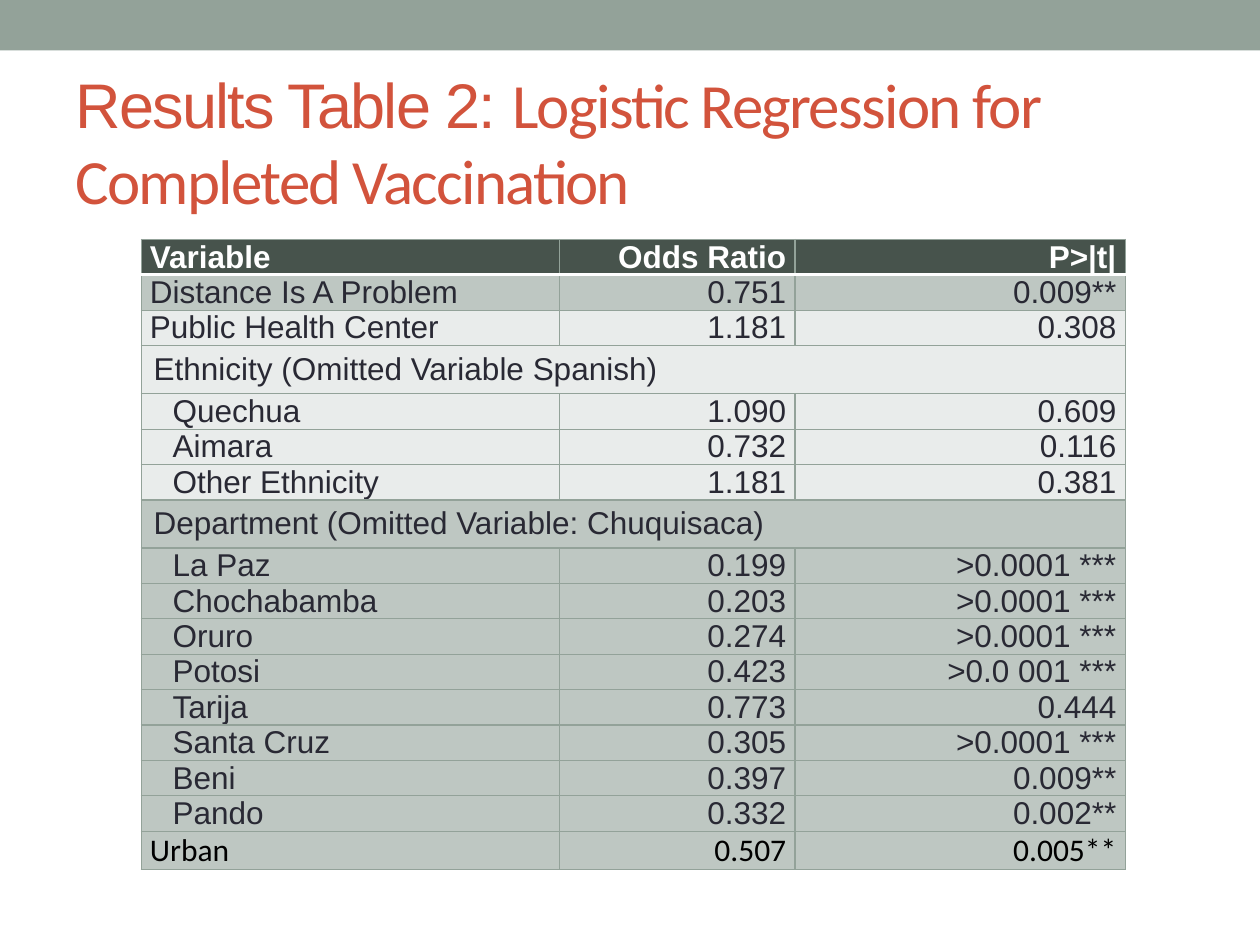
import dataclasses

import lxml.etree
import pptx
import pptx.dml.color
import pptx.enum.shapes
import pptx.enum.text
import pptx.oxml.ns
import pptx.util

Inches = pptx.util.Inches
Pt = pptx.util.Pt
Align = pptx.enum.text.PP_ALIGN
Anchor = pptx.enum.text.MSO_ANCHOR


@dataclasses.dataclass(frozen=True)
class Theme:
    sage: str = "93A299"
    header: str = "47534C"
    band: str = "BEC7C2"
    pale: str = "E9ECEB"
    title: str = "D2533C"
    ink: str = "292934"
    black: str = "000000"
    white: str = "FFFFFF"
    main_font: str = "Arial"
    alt_font: str = "Calibri"
    title_size: int = 36
    table_size: int = 18
    table_leading: float = 20.2
    rule: float = 0.75
    header_rule: float = 2.08


THEME = Theme()

COLUMN_WIDTHS = (3.32, 1.87, 2.62)
HEADINGS = ("Variable", "Odds Ratio", "P>|t|")
GENERAL = (
    ("Distance Is A Problem", "0.751", "0.009**"),
    ("Public Health Center", "1.181", "0.308"),
)
ETHNICITIES = (
    ("Quechua", "1.090", "0.609"),
    ("Aimara", "0.732", "0.116"),
    ("Other Ethnicity", "1.181", "0.381"),
)
DEPARTMENTS = (
    ("La Paz", "0.199", ">0.0001 ***"),
    ("Chochabamba", "0.203", ">0.0001 ***"),
    ("Oruro", "0.274", ">0.0001 ***"),
    ("Potosi", "0.423", ">0.0 001 ***"),
    ("Tarija", "0.773", "0.444"),
    ("Santa Cruz", "0.305", ">0.0001 ***"),
    ("Beni", "0.397", "0.009**"),
    ("Pando", "0.332", "0.002**"),
)
URBAN = ("Urban", "0.507", "0.005**")


@dataclasses.dataclass(frozen=True)
class RowStyle:
    fill: str
    color: str = THEME.ink
    font: str = THEME.main_font
    bold: bool = False
    height: float = 0.28
    indent: tuple = (0, 0)
    is_group: bool = False


def result_rows():
    member_indent = (0.12, 0.06)
    distance, health_center = GENERAL
    rows = [
        (HEADINGS, RowStyle(THEME.header, THEME.white, bold=True)),
        (distance, RowStyle(THEME.band)),
        (health_center, RowStyle(THEME.pale)),
    ]
    groups = (
        ("Ethnicity (Omitted Variable Spanish)", ETHNICITIES, THEME.pale),
        ("Department (Omitted Variable: Chuquisaca)", DEPARTMENTS, THEME.band),
    )
    for heading, members, fill in groups:
        rows.append(((heading, "", ""), RowStyle(fill, height=0.38, is_group=True)))
        rows += [(member, RowStyle(fill, indent=member_indent)) for member in members]
    rows.append((URBAN, RowStyle(THEME.band, THEME.black, THEME.alt_font,
                                 height=0.3, indent=(0.12, -0.12))))
    return rows


def rgb(color):
    return pptx.dml.color.RGBColor.from_string(color)


def add_run(paragraph, text, font, size, color, bold=False):
    run = paragraph.add_run()
    run.text = text
    run.font.name = font
    run.font.size = Pt(size)
    run.font.bold = bold
    run.font.color.rgb = rgb(color)
    return run


def add_top_band(slide):
    band = slide.shapes.add_shape(pptx.enum.shapes.MSO_SHAPE.RECTANGLE,
                                  0, 0, Inches(10), Inches(0.4))
    band.shadow.inherit = False
    band.fill.solid()
    band.fill.fore_color.rgb = rgb(THEME.sage)
    band.line.fill.background()


def add_title(slide):
    title = slide.shapes.add_textbox(Inches(0.5), Inches(0.58), Inches(9), Inches(1.08))
    frame = title.text_frame
    frame.word_wrap = True
    frame.vertical_anchor = Anchor.MIDDLE
    parts = (
        ("Results Table 2: ", THEME.main_font),
        ("Logistic Regression for Completed Vaccination", THEME.alt_font),
    )
    for text, font in parts:
        run = add_run(frame.paragraphs[0], text, font, THEME.title_size, THEME.title)
        run.font._element.set("spc", "-100")


def set_border(cell, side, color, width):
    qn = pptx.oxml.ns.qn
    line = lxml.etree.SubElement(cell._tc.get_or_add_tcPr(), qn(f"a:ln{side}"),
                                 w=str(int(Pt(width))))
    fill = lxml.etree.SubElement(line, qn("a:solidFill"))
    lxml.etree.SubElement(fill, qn("a:srgbClr"), val=color)


def style_cell(cell, style, row_index):
    for side in "LRTB":
        under_header = (row_index, side) in ((0, "B"), (1, "T"))
        if under_header:
            set_border(cell, side, THEME.white, THEME.header_rule)
        else:
            set_border(cell, side, THEME.sage, THEME.rule)
    cell.fill.solid()
    cell.fill.fore_color.rgb = rgb(style.fill)
    if style.font == THEME.main_font:
        cell.text_frame.paragraphs[0].line_spacing = Pt(THEME.table_leading)
    if not style.is_group:
        cell.vertical_anchor = Anchor.BOTTOM
        cell.margin_left = cell.margin_right = Inches(0.07)
        cell.margin_top = cell.margin_bottom = 0


def fill_cell(cell, text, style, column):
    paragraph = cell.text_frame.paragraphs[0]
    paragraph.alignment = Align.RIGHT if column else Align.LEFT
    if column == 0 and any(style.indent):
        margin, first_line = style.indent
        properties = paragraph._p.get_or_add_pPr()
        properties.set("marL", str(Inches(margin)))
        properties.set("indent", str(Inches(first_line)))
    add_run(paragraph, text, style.font, THEME.table_size, style.color, style.bold)


def add_results_table(slide):
    rows = result_rows()
    height = sum(style.height for _, style in rows)
    table = slide.shapes.add_table(len(rows), len(COLUMN_WIDTHS), Inches(1.12), Inches(1.9),
                                   Inches(sum(COLUMN_WIDTHS)), Inches(height)).table
    for column, width in zip(table.columns, COLUMN_WIDTHS):
        column.width = Inches(width)
    for row_index, (texts, style) in enumerate(rows):
        table.rows[row_index].height = Inches(style.height)
        for column, text in enumerate(texts):
            cell = table.cell(row_index, column)
            style_cell(cell, style, row_index)
            if text:
                fill_cell(cell, text, style, column)
        if style.is_group:
            table.cell(row_index, 0).merge(table.cell(row_index, len(COLUMN_WIDTHS) - 1))


def main():
    presentation = pptx.Presentation()
    presentation.slide_width = Inches(10)
    presentation.slide_height = Inches(7.5)
    slide = presentation.slides.add_slide(presentation.slide_layouts[6])
    add_top_band(slide)
    add_title(slide)
    add_results_table(slide)
    presentation.save("out.pptx")


if __name__ == "__main__":
    main()
